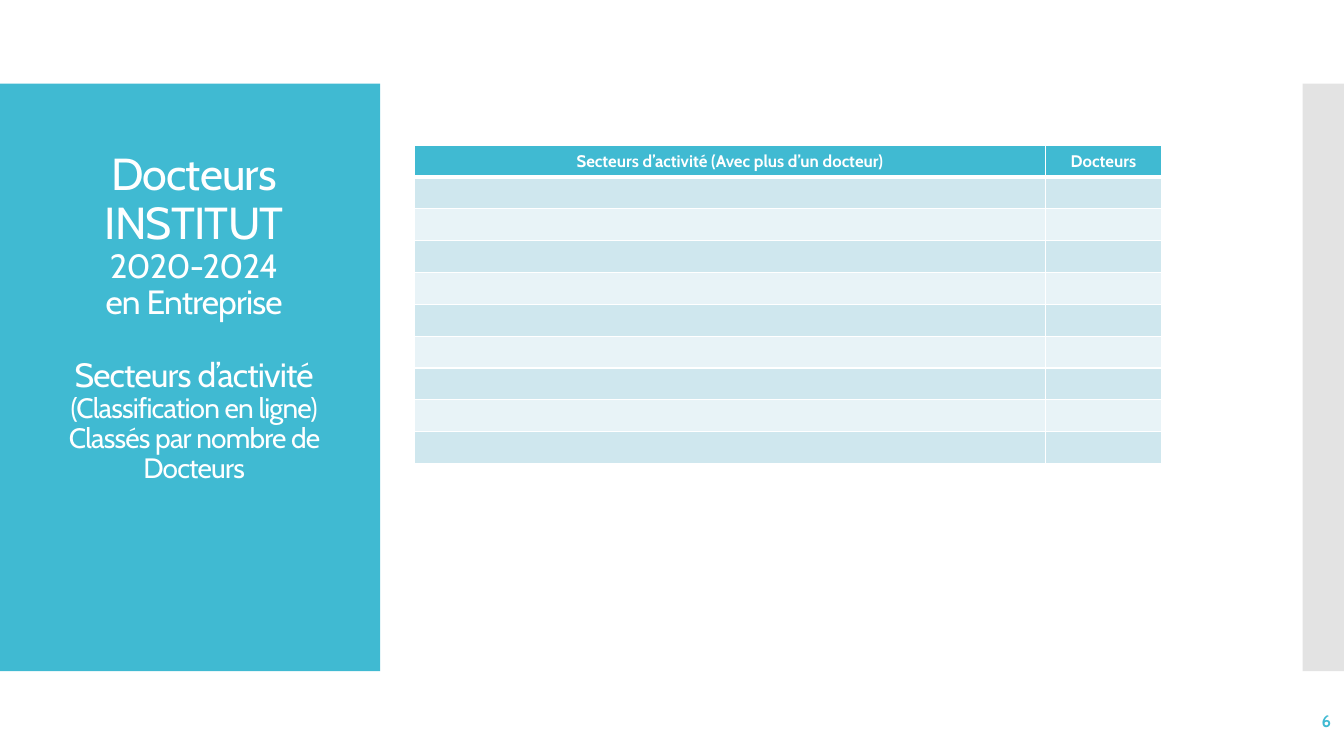
from lxml import etree
from pptx import Presentation
from pptx import util as u
from pptx.dml.color import RGBColor
from pptx.enum import shapes, text
from pptx.oxml.ns import qn

FONT = "Cabin"
TEAL, WHITE, GREY = "40BAD2", "FFFFFF", "C8C8C8"
BANDS = ("CFE7EE", "E8F3F7")
HEADINGS = ("Secteurs d’activité (Avec plus d’un docteur)", "Docteurs")
COLUMN_WIDTHS = (6.26, 1.15)
SECTOR_ROWS = 9
# Line, size in points, space before in points
TITLE_LINES = (
    ("Docteurs", 32, 0),
    ("INSTITUT", 32, 0),
    ("2020-2024", 24, 0),
    ("en Entreprise", 24, 0),
    ("Secteurs d’activité", 24, 26),
    ("(Classification en ligne)", 20, 0),
    ("Classés par nombre de Docteurs", 20, 0),
)


def rgb(color):
    return RGBColor.from_string(color)


def inches(box):
    return [u.Inches(length) for length in box]


def apply(target, formats):
    for name, value in formats.items():
        setattr(target, name, value)


def write(paragraph, words, size, color, align, bold=False):
    paragraph.alignment = align
    run = paragraph.add_run()
    run.text = words
    apply(run.font, {"name": FONT, "size": u.Pt(size), "bold": bold})
    run.font.color.rgb = rgb(color)
    return run


def add_panel(slide, box, color, opacity=100):
    panel = slide.shapes.add_shape(shapes.MSO_SHAPE.RECTANGLE, *inches(box))
    panel.shadow.inherit = False
    panel.fill.solid()
    panel.fill.fore_color.rgb = rgb(color)
    panel.line.fill.background()
    if opacity < 100:
        shade = panel.fill._xPr.find(".//" + qn("a:srgbClr"))
        etree.SubElement(shade, qn("a:alpha"), val=str(opacity * 1000))


def fill_title(slide, box):
    title = slide.shapes.title
    apply(title, dict(zip(("left", "top", "width", "height"), inches(box))))
    frame = title.text_frame
    apply(frame, {
        "word_wrap": True,
        "auto_size": text.MSO_AUTO_SIZE.NONE,
        "vertical_anchor": text.MSO_ANCHOR.TOP,
        "margin_top": u.Inches(0.28),
    })
    for index, (words, size, gap) in enumerate(TITLE_LINES):
        paragraph = frame.add_paragraph() if index else frame.paragraphs[0]
        apply(paragraph, {"line_spacing": 0.9, "space_before": u.Pt(gap)})
        run = write(paragraph, words, size, WHITE, text.PP_ALIGN.CENTER)
        run.font._element.set("spc", "-60")
    # The title stands in front of the panels
    slide.shapes._spTree.append(title._element)


def add_borders(cell, bottom):
    """Give the cell white edges, the bottom one as thick as asked, in points."""
    properties = cell._tc.get_or_add_tcPr()
    edges = (("a:lnL", 1), ("a:lnR", 1), ("a:lnT", 1), ("a:lnB", bottom))
    for position, (edge, width) in enumerate(edges):
        line = etree.Element(qn(edge), w=str(u.Pt(width)))
        fill = etree.SubElement(line, qn("a:solidFill"))
        etree.SubElement(fill, qn("a:srgbClr"), val=WHITE)
        properties.insert(position, line)


def add_sector_table(slide, box):
    frame = slide.shapes.add_table(SECTOR_ROWS + 1, len(HEADINGS), *inches(box))
    table = frame.table
    for column, width in zip(table.columns, COLUMN_WIDTHS):
        column.width = u.Inches(width)
    for row_index, row in enumerate(table.rows):
        is_header = row_index == 0
        color = TEAL if is_header else BANDS[(row_index - 1) % 2]
        for cell, heading in zip(row.cells, HEADINGS):
            apply(cell, {
                "margin_top": 0,
                "margin_bottom": 0,
                "vertical_anchor": text.MSO_ANCHOR.MIDDLE,
            })
            cell.fill.solid()
            cell.fill.fore_color.rgb = rgb(color)
            add_borders(cell, 3 if is_header else 1)
            if is_header:
                write(cell.text_frame.paragraphs[0], heading, 12, WHITE,
                      text.PP_ALIGN.CENTER, bold=True)


def add_page_number(slide, box, number):
    frame = slide.shapes.add_textbox(*inches(box)).text_frame
    apply(frame, {"word_wrap": True, "vertical_anchor": text.MSO_ANCHOR.MIDDLE})
    write(frame.paragraphs[0], number, 12, TEAL, text.PP_ALIGN.RIGHT, bold=True)


def main():
    deck = Presentation()
    apply(deck, {"slide_width": u.Inches(13.33), "slide_height": u.Inches(7.5)})
    slide = deck.slides.add_slide(deck.slide_layouts.get_by_name("Title Only"))
    add_panel(slide, (0, 0.83, 3.77, 5.83), TEAL)
    add_panel(slide, (12.92, 0.83, 0.41, 5.83), GREY, opacity=50)
    fill_title(slide, (0.11, 1.23, 3.63, 5.03))
    add_page_number(slide, (11.63, 6.95, 1.67, 0.4), "6")
    add_sector_table(slide, (4.11, 1.44, 7.41, 3.16))
    deck.save("out.pptx")


if __name__ == "__main__":
    main()
